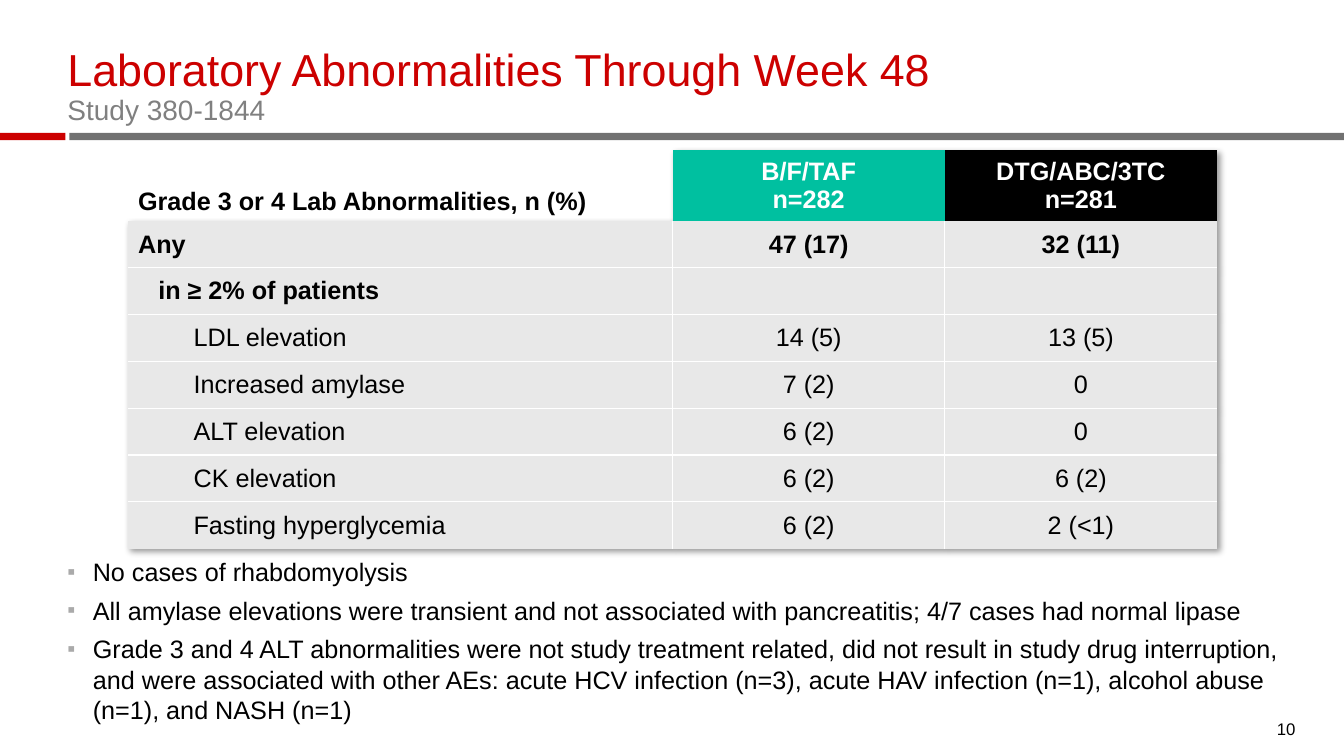
from lxml import etree
from pptx import Presentation
from pptx.dml.color import RGBColor
from pptx.enum.shapes import MSO_SHAPE
from pptx.enum.text import MSO_ANCHOR, PP_ALIGN
from pptx.oxml import parse_xml
from pptx.util import Cm, Pt

TITLE = "Laboratory Abnormalities Through Week 48"
SUBTITLE = "Study 380-1844"
PAGE_NUMBER = "10"
HEADER = ["Grade 3 or 4 Lab Abnormalities, n (%)", "B/F/TAF\nn=282", "DTG/ABC/3TC\nn=281"]
ROWS = [
    (0, "Any", "47 (17)", "32 (11)"),
    (1, "in ≥ 2% of patients", "", ""),
    (2, "LDL elevation", "14 (5)", "13 (5)"),
    (2, "Increased amylase", "7 (2)", "0"),
    (2, "ALT elevation", "6 (2)", "0"),
    (2, "CK elevation", "6 (2)", "6 (2)"),
    (2, "Fasting hyperglycemia", "6 (2)", "2 (<1)"),
]
NOTES = [
    "No cases of rhabdomyolysis",
    "All amylase elevations were transient and not associated with pancreatitis; "
    "4/7 cases had normal lipase",
    "Grade 3 and 4 ALT abnormalities were not study treatment related, did not result in "
    "study drug interruption, and were associated with other AEs: acute HCV infection (n=3), "
    "acute HAV infection (n=1), alcohol abuse (n=1), and NASH (n=1)",
]

COLORS = {
    "red": "CC0000", "rule": "717171", "subtitle": "808080", "bullet": "AAAAAA",
    "teal": "00C0A0", "black": "000000", "white": "FFFFFF", "cell": "E8E8E8",
}
FONT = "Arial"
LEFT, CENTER = PP_ALIGN.LEFT, PP_ALIGN.CENTER
TOP, MIDDLE, BOTTOM = MSO_ANCHOR.TOP, MSO_ANCHOR.MIDDLE, MSO_ANCHOR.BOTTOM
RECTANGLE = MSO_SHAPE.RECTANGLE
NAMESPACE = 'xmlns:a="http://schemas.openxmlformats.org/drawingml/2006/main"'
NO_STYLE = "{2D5ABB26-0587-4C30-8999-92F81FD0307C}"
SIDES = ("margin_left", "margin_top", "margin_right", "margin_bottom")

SLIDE_WIDTH, SLIDE_HEIGHT = 33.87, 19.05
MARGIN = 1.7
RULE_TOP, RULE_HEIGHT, RED_WIDTH, GRAY_LEFT = 3.35, 0.18, 1.65, 1.75
TABLE_LEFT, TABLE_TOP = 3.23, 3.78
COLUMN_WIDTHS = [13.72, 6.86, 6.86]
HEADER_HEIGHT, ROW_HEIGHT = 1.69, 1.18
INDENTS = [0, 0.51, 1.4]
BULLET_INDENT = 0.64


def set_all(target, **values):
    for name, value in values.items():
        setattr(target, name, value)


def write(para, text, color, size=18, bold=False):
    span = para.add_run()
    span.text = text
    set_all(span.font, name=FONT, size=Pt(size), bold=bold)
    span.font.color.rgb = RGBColor.from_string(COLORS[color])


def indent(para, left, hanging=0):
    properties = para._p.get_or_add_pPr()
    properties.set("marL", str(Cm(left)))
    properties.set("indent", str(-Cm(hanging)))
    return properties


def add_box(page, place, anchor, lines, **paragraph_format):
    box = page.shapes.add_textbox(*map(Cm, place))
    frame = box.text_frame
    set_all(frame, word_wrap=True, vertical_anchor=anchor, **dict.fromkeys(SIDES, 0))
    for number, (text, color, size) in enumerate(lines):
        para = frame.add_paragraph() if number else frame.paragraphs[0]
        set_all(para, **paragraph_format)
        write(para, text, color, size)
    return frame


def add_bar(page, left, width, color):
    bar = page.shapes.add_shape(RECTANGLE, *map(Cm, (left, RULE_TOP, width, RULE_HEIGHT)))
    bar.shadow.inherit = False
    bar.fill.solid()
    bar.fill.fore_color.rgb = RGBColor.from_string(COLORS[color])
    bar.line.fill.background()


def add_bullet(para):
    properties = indent(para, BULLET_INDENT, BULLET_INDENT)
    for xml in (
        f'<a:buClr {NAMESPACE}><a:srgbClr val="{COLORS["bullet"]}"/></a:buClr>',
        f'<a:buSzPct {NAMESPACE} val="90000"/>',
        f'<a:buFont {NAMESPACE} typeface="{FONT}"/>',
        f'<a:buChar {NAMESPACE} char="▪"/>',
    ):
        properties.append(parse_xml(xml))


def fill_cell(cell, text, color, fill, bold, align, anchor, margins):
    set_all(cell, vertical_anchor=anchor, **dict(zip(SIDES, map(Cm, margins * 2))))
    if fill:
        cell.fill.solid()
        cell.fill.fore_color.rgb = RGBColor.from_string(COLORS[fill])
    else:
        cell.fill.background()
    for number, line in enumerate(text.split("\n")):
        para = cell.text_frame.add_paragraph() if number else cell.text_frame.paragraphs[0]
        para.alignment = align
        if line:
            write(para, line, color, bold=bold)


def add_borders(cell, row, column):
    side = 0.75 if row <= 3 else 1
    edges = {
        "lnL": side if column > 0 else 0,
        "lnR": side if column < len(COLUMN_WIDTHS) - 1 else 0,
        "lnT": (0.75 if row <= 3 else 1) if row > 1 else 0,
        "lnB": (0.75 if row <= 2 else 1) if row < len(ROWS) else 0,
    }
    properties = cell._tc.get_or_add_tcPr()
    drawn = [(tag, width) for tag, width in edges.items() if width]
    for place, (tag, width) in enumerate(drawn):
        properties.insert(place, parse_xml(
            f'<a:{tag} {NAMESPACE} w="{Pt(width)}"><a:solidFill>'
            f'<a:srgbClr val="{COLORS["white"]}"/></a:solidFill></a:{tag}>'))


def add_lab_table(page):
    height = HEADER_HEIGHT + ROW_HEIGHT * len(ROWS)
    place = map(Cm, (TABLE_LEFT, TABLE_TOP, sum(COLUMN_WIDTHS), height))
    table = page.shapes.add_table(len(ROWS) + 1, len(COLUMN_WIDTHS), *place).table
    set_all(table, first_row=False, horz_banding=False)
    properties = table._tbl.tblPr
    properties[0].text = NO_STYLE
    properties.insert(0, parse_xml(
        f'<a:effectLst {NAMESPACE}><a:outerShdw blurRad="50800" dist="38100" dir="2700000" '
        f'algn="tl" rotWithShape="0"><a:srgbClr val="{COLORS["black"]}">'
        '<a:alpha val="40000"/></a:srgbClr></a:outerShdw></a:effectLst>'))
    for column, width in zip(table.columns, COLUMN_WIDTHS):
        column.width = Cm(width)
    for number, row in enumerate(table.rows):
        row.height = Cm(ROW_HEIGHT if number else HEADER_HEIGHT)

    styles = [("black", None, LEFT, BOTTOM, (0.25, 0.13)),
              ("white", "teal", CENTER, MIDDLE, (0.33, 0.13)),
              ("white", "black", CENTER, MIDDLE, (0.33, 0.13))]
    for column, (text, style) in enumerate(zip(HEADER, styles)):
        color, fill, align, anchor, margins = style
        fill_cell(table.cell(0, column), text, color, fill, True, align, anchor, margins)
    for row, (level, *texts) in enumerate(ROWS, 1):
        for column, text in enumerate(texts):
            cell = table.cell(row, column)
            align, margins = (CENTER, (0.25, 0.08)) if column else (LEFT, (0.25, 0.13))
            fill_cell(cell, text, "black", "cell", level < 2, align, MIDDLE, margins)
            add_borders(cell, row, column)
        indent(table.cell(row, 0).text_frame.paragraphs[0], INDENTS[level])


def main():
    deck = Presentation()
    set_all(deck, slide_width=Cm(SLIDE_WIDTH), slide_height=Cm(SLIDE_HEIGHT))
    page = deck.slides.add_slide(deck.slide_layouts[6])
    add_bar(page, GRAY_LEFT, SLIDE_WIDTH - GRAY_LEFT, "rule")
    add_bar(page, 0, RED_WIDTH, "red")
    add_box(page, (MARGIN, 1.3, 30.48, 1.88), BOTTOM,
            [(TITLE, "red", 32), (SUBTITLE, "subtitle", 20)], line_spacing=0.9)
    notes = add_box(page, (MARGIN, 14.02, 31.57, 3.43), TOP,
                    [(text, "black", 18) for text in NOTES], space_before=Pt(6))
    for para in notes.paragraphs:
        add_bullet(para)
    add_box(page, (32.18, 18.16, 0.91, 0.46), BOTTOM, [(PAGE_NUMBER, "black", 12)])
    add_lab_table(page)
    deck.save("out.pptx")


if __name__ == "__main__":
    main()
